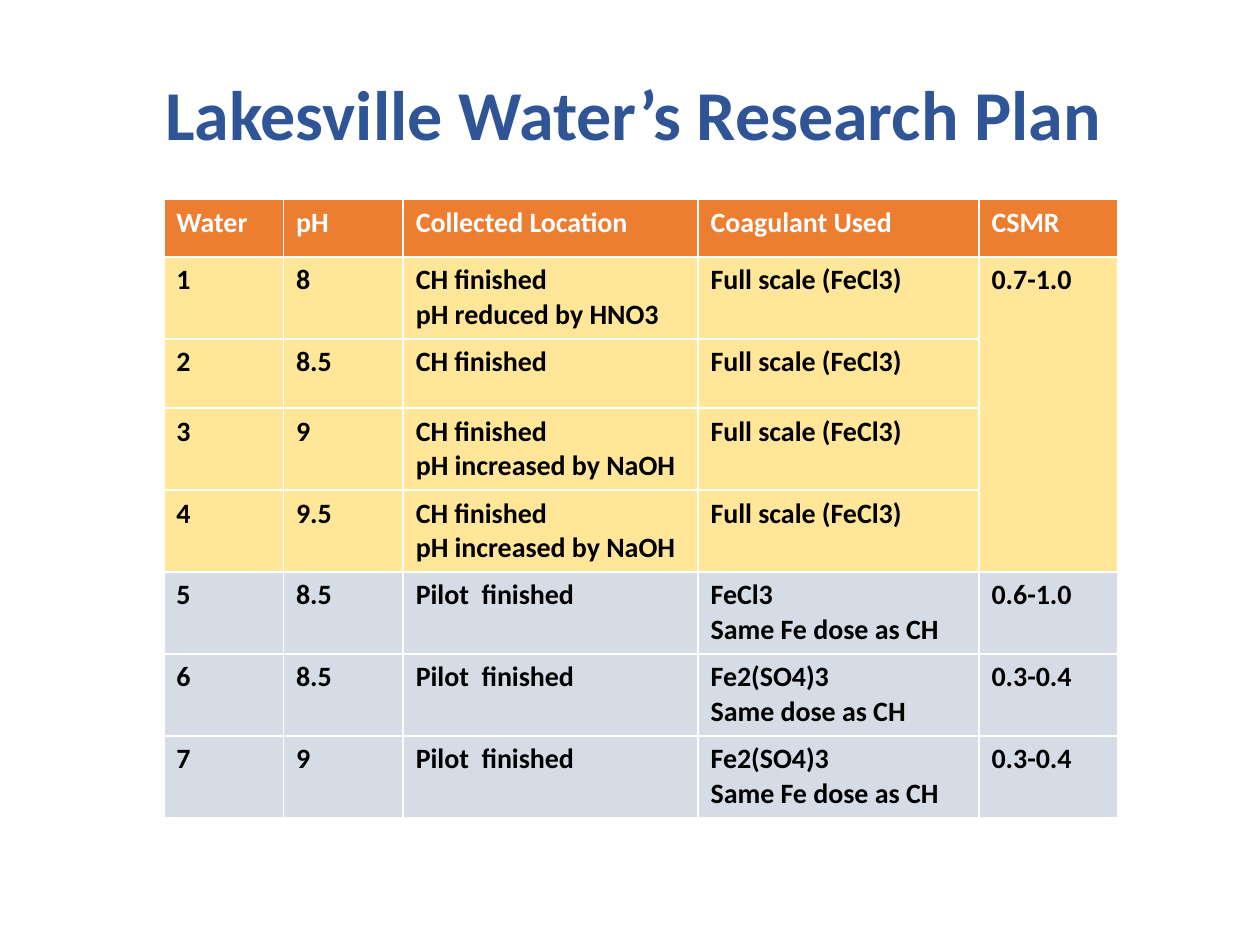
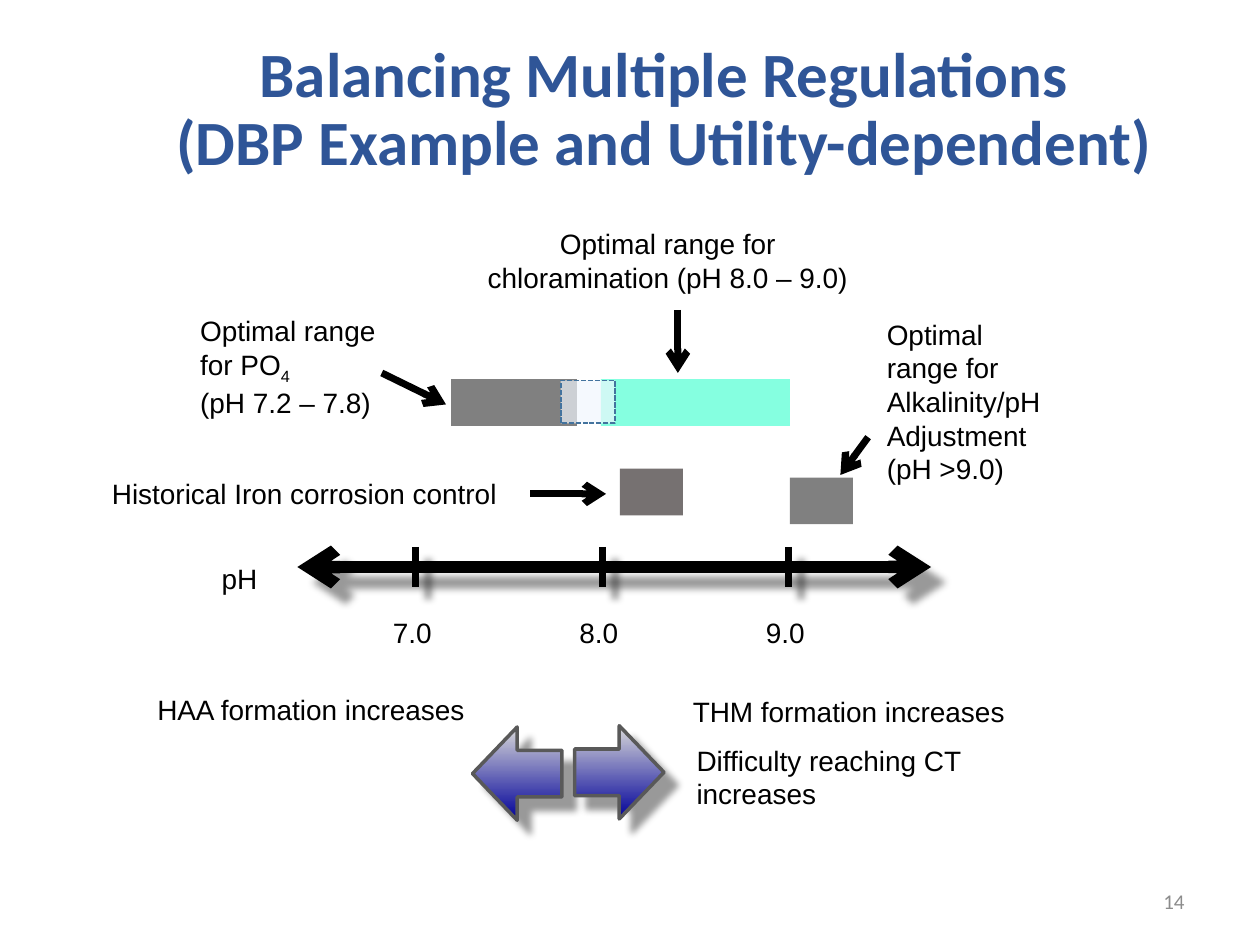
import pptx
import pptx.util
import pptx.dml.color
import pptx.enum.shapes
import pptx.enum.text
import pptx.enum.dml
import pptx.oxml
import pptx.oxml.ns
from collections import namedtuple

Pt = pptx.util.Pt
SHAPE = pptx.enum.shapes.MSO_SHAPE
ALIGN = pptx.enum.text.PP_ALIGN
ANCHOR = pptx.enum.text.MSO_ANCHOR
Box = namedtuple("Box", "x y w h")

PX = 9144  # 100 px to the inch
COLORS = {
    "title": "2F5597", "black": "000000", "white": "FFFFFF",
    "header": "ED7D31", "full_scale": "FFE699", "pilot": "D6DCE5",
    "gray": "808080", "iron": "767171", "chloramine": "85FFE0",
    "overlap": "F1F7FE", "overlap_line": "43739E",
    "arrow_top": "D9D9D9", "arrow_bottom": "000099", "arrow_line": "595959",
    "number": "8C8C8C",
}
COL_WIDTHS = [95, 95, 234, 223, 110]
ROW_HEIGHTS = [46, 65, 55, 65, 65, 65, 65, 65]
FULL_SCALE = "Full scale (FeCl3)"
ROWS = [
    ["Water", "pH", "Collected Location", "Coagulant Used", "CSMR"],
    ["1", "8", "CH finished\npH reduced by HNO3", FULL_SCALE, "0.7-1.0"],
    ["2", "8.5", "CH finished", FULL_SCALE, ""],
    ["3", "9", "CH finished\npH increased by NaOH", FULL_SCALE, ""],
    ["4", "9.5", "CH finished\npH increased by NaOH", FULL_SCALE, ""],
    ["5", "8.5", "Pilot  finished", "FeCl3\nSame Fe dose as CH", "0.6-1.0"],
    ["6", "8.5", "Pilot  finished", "Fe2(SO4)3\nSame dose as CH", "0.3-0.4"],
    ["7", "9", "Pilot  finished", "Fe2(SO4)3\nSame Fe dose as CH", "0.3-0.4"],
]


def emu(*lengths):
    return [pptx.util.Emu(n * PX) for n in lengths]


def rgb(name):
    return pptx.dml.color.RGBColor.from_string(COLORS[name])


def xml(tag, inner="", **attrs):
    text = "".join(f' {k}="{v}"' for k, v in attrs.items())
    ns = pptx.oxml.ns.nsdecls("a")
    return pptx.oxml.parse_xml(f"<a:{tag} {ns}{text}>{inner}</a:{tag}>")


def style(p, size, color, name="Arial", bold=False, align=None):
    p.font.size, p.font.name, p.font.bold = Pt(size), name, bold
    p.font.color.rgb = rgb(color)
    if align is not None:
        p.alignment = align


def set_shadow(sp, dist=0):
    """Cast a soft shadow down to the right, or none when dist is 0."""
    inner = "" if not dist else (
        f'<a:outerShdw blurRad="{Pt(4)}" dist="{Pt(dist)}" dir="2700000" '
        'algn="ctr" rotWithShape="0"><a:srgbClr val="000000">'
        '<a:alpha val="40000"/></a:srgbClr></a:outerShdw>')
    sp.element.spPr.append(xml("effectLst", inner))


def add_title(s, box, text, size, align):
    sp = s.shapes.title
    sp.left, sp.top, sp.width, sp.height = emu(*box)
    tf = sp.text_frame
    tf.text = text
    tf.auto_size = pptx.enum.text.MSO_AUTO_SIZE.NONE
    tf.vertical_anchor = ANCHOR.MIDDLE
    p = tf.paragraphs[0]
    p.line_spacing = 0.9
    style(p, size, "title", "Calibri", True, align)


def add_label(s, box, text, align=ALIGN.LEFT, wrap=True):
    tf = s.shapes.add_textbox(*emu(*box)).text_frame
    tf.word_wrap = wrap
    tf.text = text
    for p in tf.paragraphs:
        style(p, 16, "black", align=align)
    return tf


def add_line(s, x1, y1, x2, y2, width=4, head=False, tail=False, shadow=0):
    c = s.shapes.add_connector(
        pptx.enum.shapes.MSO_CONNECTOR.STRAIGHT, *emu(x1, y1, x2, y2))
    c.line.width = Pt(width)
    c.line.color.rgb = rgb("black")
    ln = c.element.spPr.find(pptx.oxml.ns.qn("a:ln"))
    for tag, wanted in (("headEnd", head), ("tailEnd", tail)):
        if wanted:
            ln.append(xml(tag, type="arrow"))
    set_shadow(c, shadow)


def add_bar(s, box, color):
    sp = s.shapes.add_shape(SHAPE.RECTANGLE, *emu(*box))
    sp.fill.solid()
    sp.fill.fore_color.rgb = rgb(color)
    sp.line.fill.background()
    set_shadow(sp)
    return sp


def add_plan_table(s, box):
    table = s.shapes.add_table(len(ROWS), len(COL_WIDTHS), *emu(*box)).table
    for col, width in zip(table.columns, emu(*COL_WIDTHS)):
        col.width = width
    for row, height in zip(table.rows, emu(*ROW_HEIGHTS)):
        row.height = height
    for i, row in enumerate(ROWS):
        fill = "header" if i == 0 else "full_scale" if i < 5 else "pilot"
        for j, text in enumerate(row):
            cell = table.cell(i, j)
            cell.text = text
            cell.fill.solid()
            cell.fill.fore_color.rgb = rgb(fill)
            for p in cell.text_frame.paragraphs:
                style(p, 16, "black" if i else "white", "Calibri", True)
    table.cell(1, 4).merge(table.cell(4, 4))


def add_ph_axis(s, box):
    x, y, w, h = box
    mid = y + h // 2
    add_line(s, x + 70, mid, x + w, mid, 7, head=True, tail=True, shadow=12)
    for i, value in enumerate(("7.0", "8.0", "9.0")):
        tick = x + 164 + 148 * i
        add_line(s, tick, y, tick, y + h, shadow=10)
        add_label(s, Box(tick - 28, y + 50, 51, 37), value, wrap=False)
    add_label(s, Box(x, y + 7, 49, 37), "pH", wrap=False)


def add_ranges(s, box):
    x, y = box.x, box.y
    # Phosphate
    add_bar(s, Box(x + 279, y + 126, 100, 37), "gray")
    tf = add_label(s, Box(x + 70, y + 69, 180, 91),
                   "Optimal range for PO\n(pH 7.2 – 7.8)")
    r = tf.paragraphs[0].add_run()
    r.text = "4"
    r.font.size = Pt(16)
    r.font._element.set("baseline", "-25000")
    add_line(s, x + 224, y + 121, x + 275, y + 146, tail=True)
    # Chloramination
    add_bar(s, Box(x + 398, y + 126, 150, 37), "chloramine")
    add_label(s, Box(x + 284, y, 334, 64),
              "Optimal range for chloramination (pH 8.0 – 9.0)", ALIGN.CENTER)
    add_line(s, x + 459, y + 71, x + 459, y + 121, tail=True)
    # Alkalinity
    add_bar(s, Box(x + 548, y + 204, 50, 37), "gray")
    add_label(s, Box(x + 615, y + 72, 156, 145),
              "Optimal range for Alkalinity/pH Adjustment\n(pH >9.0)")
    add_line(s, x + 610, y + 172, x + 588, y + 202, tail=True)
    # Overlap of phosphate and chloramination
    sp = add_bar(s, Box(x + 366, y + 127, 43, 34), "overlap")
    clr = sp.element.spPr.find(".//" + pptx.oxml.ns.qn("a:srgbClr"))
    clr.append(xml("alpha", val=68000))
    sp.line.color.rgb = rgb("overlap_line")
    sp.line.width = Pt(1)
    sp.line.dash_style = pptx.enum.dml.MSO_LINE.SQUARE_DOT
    # Iron corrosion
    add_bar(s, Box(x + 413, y + 197, 50, 37), "iron")
    add_label(s, Box(x, y + 198, 384, 37), "Historical Iron corrosion control")
    add_line(s, x + 342, y + 217, x + 402, y + 217, tail=True)


def add_block_arrow(s, box, kind):
    sp = s.shapes.add_shape(kind, *emu(*box))
    sp.fill.gradient()
    sp.fill.gradient_angle = 270
    stops = zip(sp.fill.gradient_stops, (0, 1), ("arrow_top", "arrow_bottom"))
    for stop, position, color in stops:
        stop.position = position
        stop.color.rgb = rgb(color)
    sp.line.color.rgb = rgb("arrow_line")
    sp.line.width = Pt(2)
    set_shadow(sp, 10)


def add_formation(s, box):
    x, y = box.x, box.y
    add_block_arrow(s, Box(x + 260, y + 32, 71, 74), SHAPE.LEFT_ARROW)
    add_block_arrow(s, Box(x + 341, y + 31, 71, 74), SHAPE.RIGHT_ARROW)
    add_label(s, Box(x, y, 307, 37), "HAA formation increases")
    add_label(s, Box(x + 425, y + 1, 307, 37), "THM formation increases")
    add_label(s, Box(x + 428, y + 40, 307, 64),
              "Difficulty reaching CT increases")


def add_slide_number(s, box, number):
    tf = s.shapes.add_textbox(*emu(*box)).text_frame
    tf.word_wrap = True
    tf.vertical_anchor = ANCHOR.MIDDLE
    tf.text = number
    style(tf.paragraphs[0], 12, "number", "Calibri", align=ALIGN.RIGHT)


def plan_slide(prs):
    s = prs.slides.add_slide(prs.slide_layouts[5])
    add_title(s, Box(121, 39, 848, 109),
              "Lakesville Water’s Research Plan", 40, ALIGN.LEFT)
    add_plan_table(s, Box(130, 158, sum(COL_WIDTHS), sum(ROW_HEIGHTS)))


def balance_slide(prs):
    s = prs.slides.add_slide(prs.slide_layouts[5])
    add_title(s, Box(77, 6, 900, 164),
              "Balancing Multiple Regulations\v"
              "(DBP Example and Utility-dependent)", 36, ALIGN.CENTER)
    add_ph_axis(s, Box(166, 434, 573, 32))
    add_ranges(s, Box(79, 175, 771, 241))
    add_formation(s, Box(115, 545, 735, 106))
    add_slide_number(s, Box(717, 695, 233, 40), "14")


def main():
    prs = pptx.Presentation()
    prs.slide_width, prs.slide_height = emu(1000, 750)
    plan_slide(prs)
    balance_slide(prs)
    prs.save("out.pptx")


if __name__ == "__main__":
    main()
